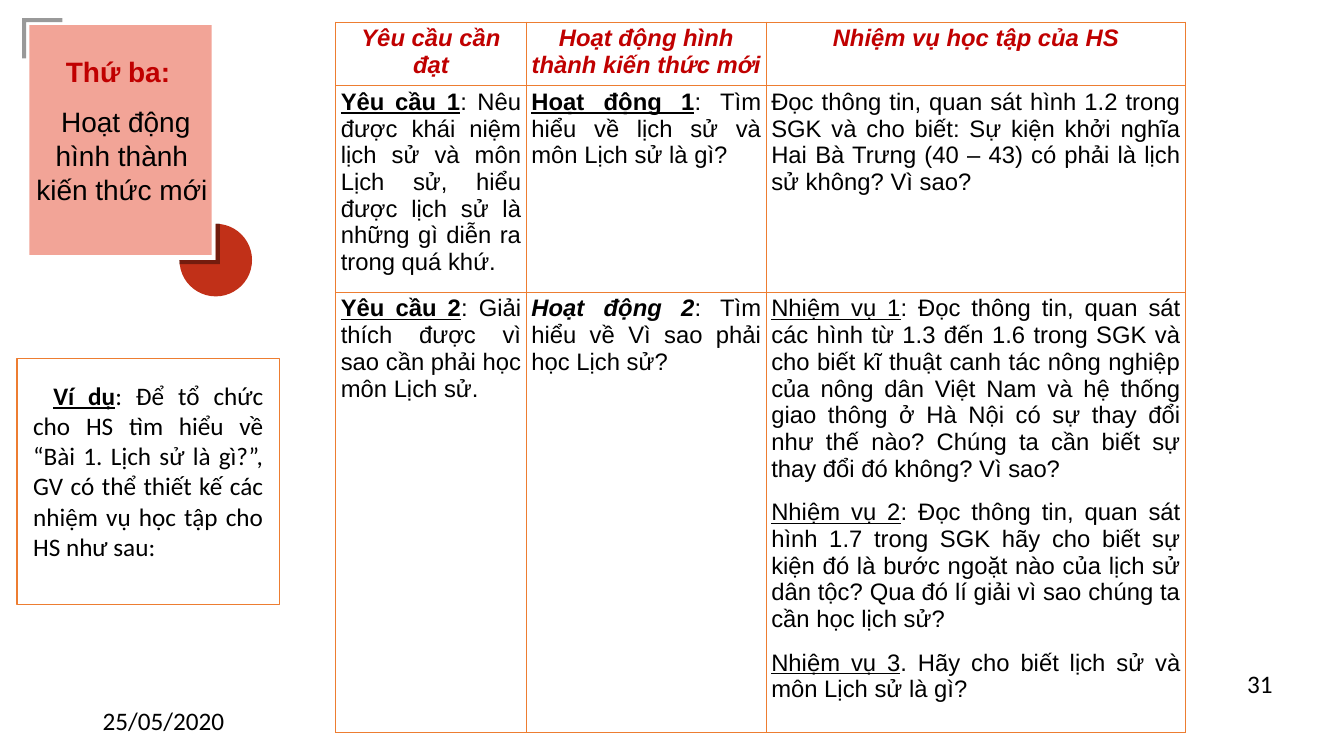
from lxml import etree
from pptx import Presentation
from pptx.dml.color import RGBColor
from pptx.enum.shapes import MSO_SHAPE
from pptx.enum.text import MSO_ANCHOR, PP_ALIGN
from pptx.oxml.ns import qn
from pptx.util import Inches, Pt

RECTANGLE, PIE = MSO_SHAPE.RECTANGLE, MSO_SHAPE.PIE
TOP = MSO_ANCHOR.TOP
LEFT, CENTER, JUSTIFY = PP_ALIGN.LEFT, PP_ALIGN.CENTER, PP_ALIGN.JUSTIFY
BLACK = RGBColor(0x00, 0x00, 0x00)
WHITE = RGBColor(0xFF, 0xFF, 0xFF)
CRIMSON = RGBColor(0xC0, 0x00, 0x00)
SALMON = RGBColor(0xF2, 0xA4, 0x97)
BRICK = RGBColor(0xC1, 0x30, 0x18)
ORANGE = RGBColor(0xED, 0x7D, 0x31)

HEADINGS = ["Yêu cầu cần đạt", "Hoạt động hình thành kiến thức mới", "Nhiệm vụ học tập của HS"]
ROWS = [
    [
        [[("Yêu cầu 1", "bu"), (": Nêu được khái niệm lịch sử và môn Lịch sử, hiểu được lịch sử "
                                "là những gì diễn ra trong quá khứ.", "")]],
        [[("Hoạt động 1", "bu"), (": Tìm hiểu về lịch sử và môn Lịch sử là gì?", "")]],
        [[("Đọc thông tin, quan sát hình 1.2 trong SGK và cho biết: Sự kiện khởi nghĩa "
           "Hai Bà Trưng (40 – 43) có phải là lịch sử không? Vì sao?", "")]],
    ],
    [
        [[("Yêu cầu 2", "bu"), (": Giải thích được vì sao cần phải học môn Lịch sử.", "")]],
        [[("Hoạt động 2", "bi"), (": Tìm hiểu về Vì sao phải học Lịch sử?", "")]],
        [
            [("Nhiệm vụ 1", "u"), (": Đọc thông tin, quan sát các hình từ 1.3 đến 1.6 trong SGK và "
                                   "cho biết kĩ thuật canh tác nông nghiệp của nông dân Việt Nam và "
                                   "hệ thống giao thông ở Hà Nội có sự thay đổi như thế nào? Chúng ta "
                                   "cần biết sự thay đổi đó không? Vì sao?", "")],
            [("Nhiệm vụ 2", "u"), (": Đọc thông tin, quan sát hình 1.7 trong SGK hãy cho biết sự "
                                   "kiện đó là bước ngoặt nào của lịch sử dân tộc? Qua đó lí giải "
                                   "vì sao chúng ta cần học lịch sử?", "")],
            [("Nhiệm vụ 3", "u"), (". Hãy cho biết lịch sử và môn Lịch sử là gì?", "")],
        ],
    ],
]


class LessonSlide:
    heading_font = "Arial"
    body_font = "Calibri"

    def __init__(self, deck):
        self.page = deck.slides.add_slide(deck.slide_layouts[6])

    def fill_text(self, frame, paragraphs, size, font, align=LEFT, color=BLACK, indent=0):
        frame.word_wrap = True
        frame.vertical_anchor = TOP
        for index, spans in enumerate(paragraphs):
            para = frame.paragraphs[0] if index == 0 else frame.add_paragraph()
            para.alignment = align
            para.space_before = Pt(6 if index else 0)
            para.space_after = Pt(6)
            if indent:
                para._p.get_or_add_pPr().set("indent", str(Inches(indent)))
            for text, style, *override in spans:
                span = para.add_run()
                span.text = text
                span.font.name = font
                span.font.size = Pt(size)
                span.font.bold = "b" in style
                span.font.italic = "i" in style
                span.font.underline = "u" in style
                span.font.color.rgb = override[0] if override else color

    def text(self, place, paragraphs, size, font, align=LEFT):
        box = self.page.shapes.add_textbox(*map(Inches, place))
        self.fill_text(box.text_frame, paragraphs, size, font, align)

    def shape(self, kind, place, fill=None, line=None):
        shape = self.page.shapes.add_shape(kind, *map(Inches, place))
        shape.shadow.inherit = False
        if fill is None:
            shape.fill.background()
        else:
            shape.fill.solid()
            shape.fill.fore_color.rgb = fill
        if line is None:
            shape.line.fill.background()
        else:
            shape.line.color.rgb = line
            shape.line.width = Pt(1)
        return shape

    def corner(self, x, y, direction, arm=0.4, thickness=0.04):
        steps = [(0, 0), (arm, 0), (arm, thickness), (thickness, thickness),
                 (thickness, arm), (0, arm)]
        points = [(Inches(x + direction * across), Inches(y + direction * down))
                  for across, down in steps]
        builder = self.page.shapes.build_freeform(*points[0])
        builder.add_line_segments(points[1:], close=True)
        bracket = builder.convert_to_shape()
        bracket.shadow.inherit = False
        bracket.line.fill.background()
        bracket.fill.solid()
        bracket.fill.fore_color.rgb = BLACK
        tint = bracket._element.spPr.find(qn("a:solidFill"))[0]
        etree.SubElement(tint, qn("a:alpha")).set("val", "40000")

    def border(self, cell, color):
        properties = cell._tc.get_or_add_tcPr()
        for side in ("a:lnL", "a:lnR", "a:lnT", "a:lnB"):
            edge = etree.SubElement(properties, qn(side), w=str(Pt(1)))
            fill = etree.SubElement(edge, qn("a:solidFill"))
            etree.SubElement(fill, qn("a:srgbClr"), val=str(color))

    def table(self, place, widths, heights, headings, rows):
        content = [[[[(heading, "bi")]] for heading in headings]] + rows
        table = self.page.shapes.add_table(len(heights), len(widths), *map(Inches, place)).table
        table.first_row = table.horz_banding = False
        for column, width in zip(table.columns, widths):
            column.width = Inches(width)
        for number, (row, height) in enumerate(zip(table.rows, heights)):
            row.height = Inches(height)
            align, color = (JUSTIFY, BLACK) if number else (CENTER, CRIMSON)
            for cell, paragraphs in zip(row.cells, content[number]):
                cell.margin_left = cell.margin_right = Inches(0.05)
                cell.margin_top = cell.margin_bottom = Inches(0.03)
                self.border(cell, ORANGE)
                cell.fill.background()
                self.fill_text(cell.text_frame, paragraphs, 17, self.heading_font, align, color)


def main():
    deck = Presentation()
    deck.slide_width, deck.slide_height = Inches(13.33), Inches(7.5)
    lesson = LessonSlide(deck)

    lesson.text((0.92, 6.95, 3, 0.4), [[("25/05/2020", "")]], 18, lesson.body_font)
    lesson.text((12.27, 6.58, 0.5, 0.4), [[("31", "")]], 18, lesson.body_font)

    lesson.shape(RECTANGLE, (0.29, 0.25, 1.81, 2.28), fill=SALMON)
    disc = lesson.shape(PIE, (1.78, 2.22, 0.72, 0.72), fill=BRICK)
    disc.adjustments[0] = 162
    disc.adjustments[1] = 108
    lesson.corner(2.18, 2.62, -1)
    lesson.corner(0.22, 0.18, 1)
    title = [[("Thứ ba: ", "b", CRIMSON)], [(" Hoạt động hình thành kiến thức mới", "")]]
    lesson.text((0.26, 0.49, 1.9, 2.37), title, 20, lesson.heading_font, CENTER)

    lesson.table((3.33, 0.22, 8.43, 7.05), (1.89, 2.38, 4.16), (0.63, 2.05, 4.37), HEADINGS, ROWS)

    example = lesson.shape(RECTANGLE, (0.23, 3.72, 2.48, 2.91), fill=WHITE)
    prompt = [[("Ví dụ", "bu"),
               (": Để tổ chức cho HS tìm hiểu về “Bài 1. Lịch sử là gì?”, GV có thể "
                "thiết kế các nhiệm vụ học tập cho HS như sau:", "")]]
    lesson.fill_text(example.text_frame, prompt, 18, lesson.body_font, JUSTIFY, indent=0.2)
    lesson.shape(RECTANGLE, (0.17, 3.56, 2.6, 2.44), line=ORANGE)

    deck.save("out.pptx")


if __name__ == "__main__":
    main()
